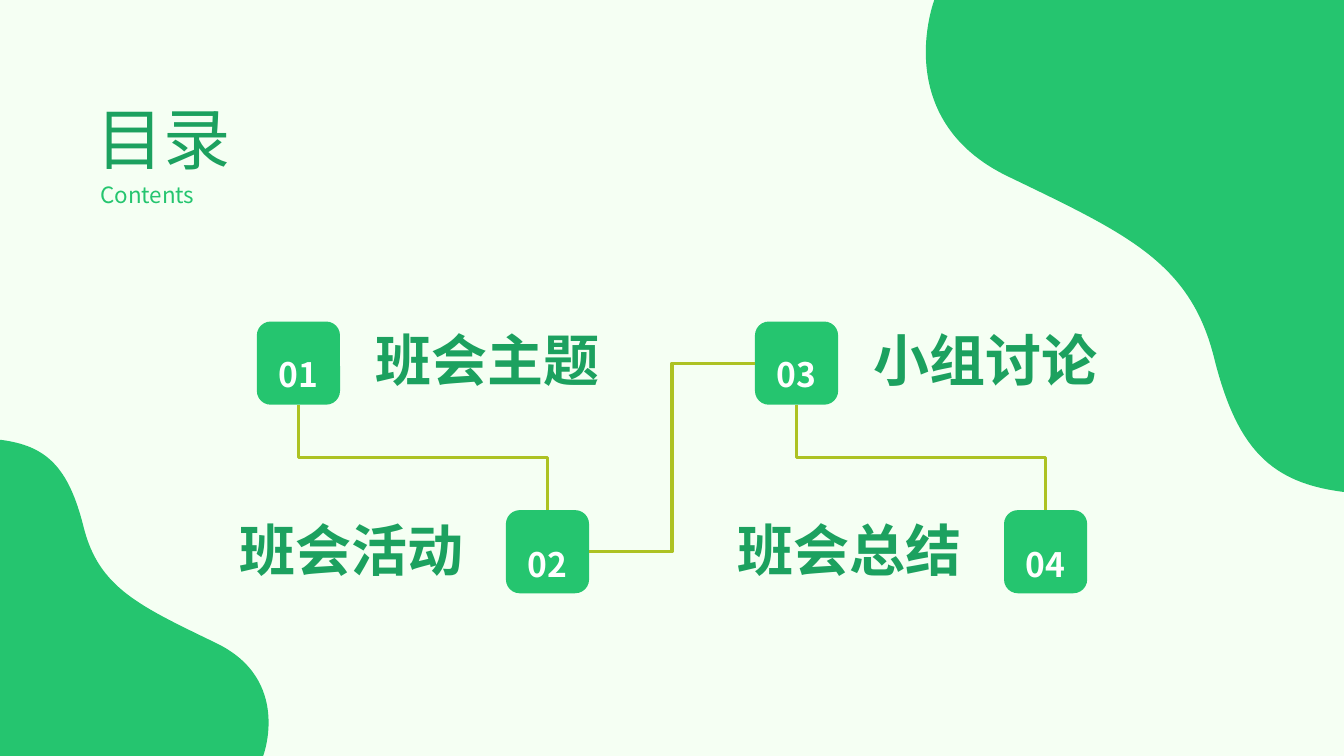
from lxml.etree import SubElement
from pptx import Presentation
from pptx.dml.color import RGBColor
from pptx.enum.shapes import MSO_CONNECTOR, MSO_SHAPE
from pptx.enum.text import MSO_ANCHOR, MSO_AUTO_SIZE, PP_ALIGN
from pptx.oxml.ns import qn
from pptx.util import Pt

BACKGROUND = RGBColor(0xF5, 0xFF, 0xF3)
GREEN = RGBColor(0x25, 0xC5, 0x6F)
DARK_GREEN = RGBColor(0x1C, 0xA1, 0x5F)
OLIVE = RGBColor(0xAD, 0xC2, 0x22)
WHITE = RGBColor(0xFF, 0xFF, 0xFF)
FONT = "Noto Sans CJK JP"
SLIDE_WIDTH, SLIDE_HEIGHT = 960, 540
TILE = 59.4
TOPICS = ["班会主题", "班会活动", "小组讨论", "班会总结"]


def place(shape, left, top, width, height):
    shape.left, shape.top = Pt(left), Pt(top)
    shape.width, shape.height = Pt(width), Pt(height)


def write(shape, text, size, color, bold=False, align=PP_ALIGN.JUSTIFY, caption=False):
    frame = shape.text_frame
    frame.word_wrap = True
    frame.auto_size = MSO_AUTO_SIZE.NONE if caption else MSO_AUTO_SIZE.SHAPE_TO_FIT_TEXT
    frame.vertical_anchor = MSO_ANCHOR.MIDDLE if caption else MSO_ANCHOR.TOP
    if caption:
        frame.margin_top, frame.margin_bottom = Pt(16), 0
    paragraph = frame.paragraphs[0]
    paragraph.alignment = align
    if caption:
        paragraph.space_after = Pt(16)
    run = paragraph.add_run()
    run.text = text
    font = run.font
    font.name, font.size, font.bold = FONT, Pt(size), bold
    font.color.rgb = color
    SubElement(font._element, qn("a:ea"), typeface=FONT)


def add_text(slide, text, left, top, width, height, **style):
    box = slide.shapes.add_textbox(Pt(left), Pt(top), Pt(width), Pt(height))
    write(box, text, **style)


def paint(shape):
    shape.shadow.inherit = False
    shape.fill.solid()
    shape.fill.fore_color.rgb = GREEN
    shape.line.fill.background()


def add_corner_blob(slide, start, curves, corner):
    points = [point for curve in curves for point in curve] + [corner]
    builder = slide.shapes.build_freeform(Pt(start[0]), Pt(start[1]))
    builder.add_line_segments([(Pt(x), Pt(y)) for x, y in points], close=True)
    blob = builder.convert_to_shape()
    segments = list(blob._element.iter(qn("a:lnTo")))
    for first in range(0, 3 * len(curves), 3):
        bend = segments[first].makeelement(qn("a:cubicBezTo"))
        segments[first].addprevious(bend)
        for segment in segments[first:first + 3]:
            bend.append(segment[0])
            segment.getparent().remove(segment)
    paint(blob)


def add_heading(slide, left, top):
    title = slide.shapes.title
    place(title, left, top, 124.6, 65.5)
    write(title, "目录", size=48, color=DARK_GREEN)
    add_text(slide, "Contents", left + 2.9, top + 54, 118.8, 22.3,
             size=16, color=GREEN, caption=True)


def add_topic(slide, number, topic, left, top, label_after):
    tile = slide.shapes.add_shape(MSO_SHAPE.ROUNDED_RECTANGLE,
                                  Pt(left), Pt(top), Pt(TILE), Pt(TILE))
    paint(tile)
    nudge = -0.6 if label_after else 0.6
    add_text(slide, f"{number:02}", left + 3.1, top + 7.5 + nudge, 52.6, 45.4, size=24,
             color=WHITE, bold=True, align=PP_ALIGN.CENTER, caption=True)
    label_left = left + 77.8 if label_after else left - 201.2
    add_text(slide, topic, label_left, top + nudge, 177.8, 55.4, size=40, color=DARK_GREEN,
             bold=True, align=PP_ALIGN.JUSTIFY if label_after else PP_ALIGN.RIGHT)
    return tile


def link(slide, source, target, downward):
    elbow = slide.shapes.add_connector(MSO_CONNECTOR.ELBOW, 0, 0, 0, 0)
    elbow.begin_connect(source, 2 if downward else 3)
    elbow.end_connect(target, 0 if downward else 1)
    elbow.line.color.rgb = OLIVE
    elbow.line.width = Pt(2.25)
    properties = elbow._element.spPr
    SubElement(properties, qn("a:effectLst"))
    if downward:
        left, top = elbow.left.pt, elbow.top.pt
        across, down = elbow.width.pt, elbow.height.pt
        shift = (across - down) / 2
        place(elbow, left + shift, top - shift, down, across)
        elbow.rotation = 270
        properties.xfrm.set("flipH", "1")


def add_agenda(slide, left, top, column_step, row_step):
    tiles = []
    for index, topic in enumerate(TOPICS):
        row = index % 2
        tiles.append(add_topic(slide, index + 1, topic, left + index * column_step,
                               top + row * row_step, label_after=row == 0))
    for index, (source, target) in enumerate(zip(tiles, tiles[1:])):
        link(slide, source, target, downward=index % 2 == 0)


def build_contents_slide(presentation):
    slide = presentation.slides.add_slide(presentation.slide_layouts[5])
    slide.background.fill.solid()
    slide.background.fill.fore_color.rgb = BACKGROUND
    add_corner_blob(slide, (SLIDE_WIDTH, 351.4), [
        ((908, 344.9), (883.4, 321.1), (866.9, 254.2)),
        ((849.6, 187.2), (805, 167), (720, 126)),
        ((635, 85), (667.4, 0), (667.4, 0)),
    ], (SLIDE_WIDTH, 0))
    add_corner_blob(slide, (0, 314.1), [
        ((33.1, 318.2), (49, 333.4), (59.8, 376.6)),
        ((70.6, 419.8), (99.4, 432.7), (154.1, 459.2)),
        ((208.8, 485.3), (188, SLIDE_HEIGHT), (188, SLIDE_HEIGHT)),
    ], (0, SLIDE_HEIGHT))
    add_heading(slide, 61.7, 65.9)
    add_agenda(slide, 183.5, 229.7, 177.9, 134.7)


def main():
    presentation = Presentation()
    presentation.slide_width, presentation.slide_height = Pt(SLIDE_WIDTH), Pt(SLIDE_HEIGHT)
    build_contents_slide(presentation)
    presentation.save("out.pptx")


if __name__ == "__main__":
    main()
